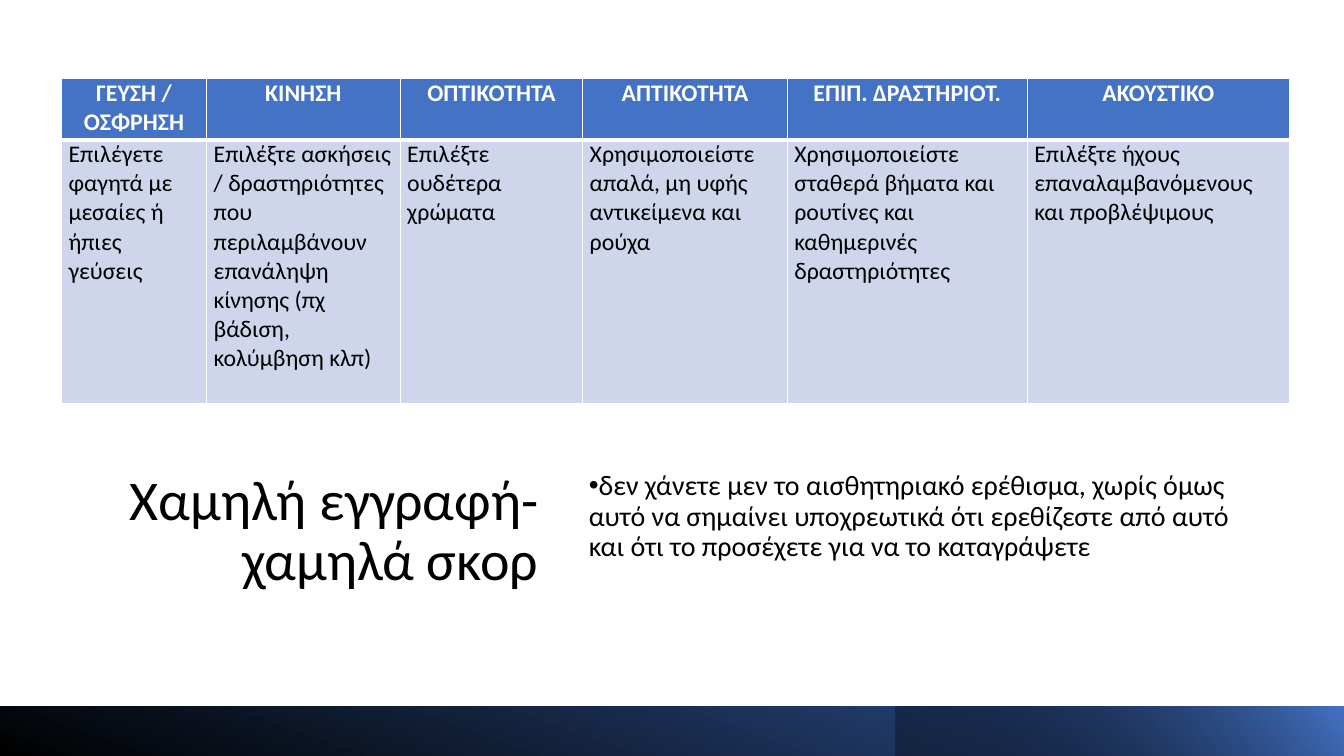
from dataclasses import dataclass

from lxml import etree
from pptx import Presentation
from pptx import util as u
from pptx.dml.color import RGBColor
from pptx.enum import shapes, text
from pptx.oxml.ns import qn

# Content
TITLE = "Χαμηλή εγγραφή- χαμηλά σκορ"
BODY = ("δεν χάνετε μεν το αισθητηριακό ερέθισμα, χωρίς όμως αυτό να σημαίνει "
        "υποχρεωτικά ότι ερεθίζεστε από αυτό και ότι το προσέχετε για να το καταγράψετε")
# Heading, advice, column width
SENSES = [
    ("ΓΕΥΣΗ / ΟΣΦΡΗΣΗ", "Επιλέγετε φαγητά με μεσαίες ή ήπιες γεύσεις", 1.44),
    ("ΚΙΝΗΣΗ", "Επιλέξτε ασκήσεις / δραστηριότητες που περιλαμβάνουν επανάληψη "
               "κίνησης (πχ βάδιση, κολύμβηση κλπ)", 1.92),
    ("ΟΠΤΙΚΟΤΗΤΑ", "Επιλέξτε ουδέτερα χρώματα", 1.81),
    ("ΑΠΤΙΚΟΤΗΤΑ", "Χρησιμοποιείστε απαλά, μη υφής αντικείμενα και ρούχα", 2.03),
    ("ΕΠΙΠ. ΔΡΑΣΤΗΡΙΟΤ.", "Χρησιμοποιείστε σταθερά βήματα και ρουτίνες και "
                          "καθημερινές δραστηριότητες", 2.38),
    ("ΑΚΟΥΣΤΙΚΟ", "Επιλέξτε ήχους επαναλαμβανόμενους και προβλέψιμους", 2.6),
]
ROW_HEIGHTS = (0.61, 2.61)


@dataclass(frozen=True)
class Theme:
    font: str = "Calibri"
    black: str = "000000"
    white: str = "FFFFFF"
    accent: str = "4472C4"
    dark_accent: str = "2F5597"
    pale: str = "CFD5EA"
    title_size: int = 40
    body_size: int = 20
    table_size: int = 17


THEME = Theme()
# Left, width, gradient angle, first and last stop (position, colour), first opacity
BARS = [
    (0, 13.33, 250, ((0, THEME.black), (1, THEME.dark_accent)), 100),
    (8.88, 4.46, 220, ((0.19, THEME.black), (0.99, THEME.accent)), 31),
]


def format_text(frame, size, color, alignment, bold=False):
    paragraph = frame.paragraphs[0]
    paragraph.alignment = alignment
    font = paragraph.runs[0].font
    font.name, font.size, font.bold = THEME.font, u.Pt(size), bold
    font.color.rgb = RGBColor.from_string(color)
    return paragraph


def fill_placeholder(placeholder, left, width, wording, size, alignment):
    placeholder.left, placeholder.top = u.Inches(left), u.Inches(4.63)
    placeholder.width, placeholder.height = u.Inches(width), u.Inches(1.97)
    frame = placeholder.text_frame
    frame.text = wording
    frame.word_wrap = True
    frame.auto_size = text.MSO_AUTO_SIZE.NONE
    frame.vertical_anchor = text.MSO_ANCHOR.TOP
    paragraph = format_text(frame, size, THEME.black, alignment)
    paragraph.line_spacing = 0.9
    paragraph.space_before = u.Pt(0)
    return paragraph


def add_bar(slide, left, width, angle, stops, opacity):
    bar = slide.shapes.add_shape(shapes.MSO_SHAPE.RECTANGLE, u.Inches(left),
                                 u.Inches(7.01), u.Inches(width), u.Inches(0.51))
    bar.shadow.inherit = False
    bar.line.fill.background()
    bar.fill.gradient()
    bar.fill.gradient_angle = 360 - angle
    for stop, (position, color) in zip(bar.fill.gradient_stops, stops):
        stop.position = position
        stop.color.rgb = RGBColor.from_string(color)
    bar.element.xpath(".//a:xfrm")[0].set("flipH", "1")
    if opacity < 100:
        first_color = bar.element.xpath(".//a:gs/a:srgbClr")[0]
        etree.SubElement(first_color, qn("a:alpha")).set("val", str(opacity * 1000))


def add_borders(cell, top, bottom):
    properties = cell._tc.get_or_add_tcPr()
    for side, width in (("L", 1), ("R", 1), ("T", top), ("B", bottom)):
        line = etree.SubElement(properties, qn(f"a:ln{side}"), w=str(u.Pt(width)))
        fill = etree.SubElement(line, qn("a:solidFill"))
        etree.SubElement(fill, qn("a:srgbClr")).set("val", THEME.white)


def format_cell(cell, wording, header):
    add_borders(cell, top=1 if header else 3, bottom=3 if header else 1)
    cell.fill.solid()
    cell.fill.fore_color.rgb = RGBColor.from_string(
        THEME.accent if header else THEME.pale)
    cell.margin_left = cell.margin_right = u.Inches(0.07)
    cell.margin_top = cell.margin_bottom = 0
    cell.text_frame.text = wording
    format_text(cell.text_frame, THEME.table_size,
                THEME.white if header else THEME.black,
                text.PP_ALIGN.CENTER if header else text.PP_ALIGN.LEFT, header)


def add_senses_table(slide):
    widths = [width for _, _, width in SENSES]
    table = slide.shapes.add_table(
        len(ROW_HEIGHTS), len(SENSES), u.Inches(0.61), u.Inches(0.78),
        u.Inches(sum(widths)), u.Inches(sum(ROW_HEIGHTS))).table
    for row, height in zip(table.rows, ROW_HEIGHTS):
        row.height = u.Inches(height)
    for column, (heading, advice, width) in enumerate(SENSES):
        table.columns[column].width = u.Inches(width)
        format_cell(table.cell(0, column), heading, header=True)
        format_cell(table.cell(1, column), advice, header=False)


def main():
    presentation = Presentation()
    presentation.slide_width = u.Inches(13.33)
    presentation.slide_height = u.Inches(7.5)
    slide = presentation.slides.add_slide(presentation.slide_layouts[1])

    # Title and explanation
    fill_placeholder(slide.shapes.title, 0.9, 4.54, TITLE,
                     THEME.title_size, text.PP_ALIGN.RIGHT)
    paragraph = fill_placeholder(slide.placeholders[1], 5.74, 6.82, BODY,
                                 THEME.body_size, text.PP_ALIGN.LEFT)
    paragraph.space_after = u.Pt(6)
    properties = paragraph._p.get_or_add_pPr()
    properties.set("marL", "0")
    properties.set("indent", str(u.Inches(-0.25)))
    etree.SubElement(properties, qn("a:buFont")).set("typeface", "Arial")
    etree.SubElement(properties, qn("a:buChar")).set("char", "•")

    # Bottom band
    for bar in BARS:
        add_bar(slide, *bar)

    # Table of senses
    add_senses_table(slide)

    presentation.save("out.pptx")


if __name__ == "__main__":
    main()
